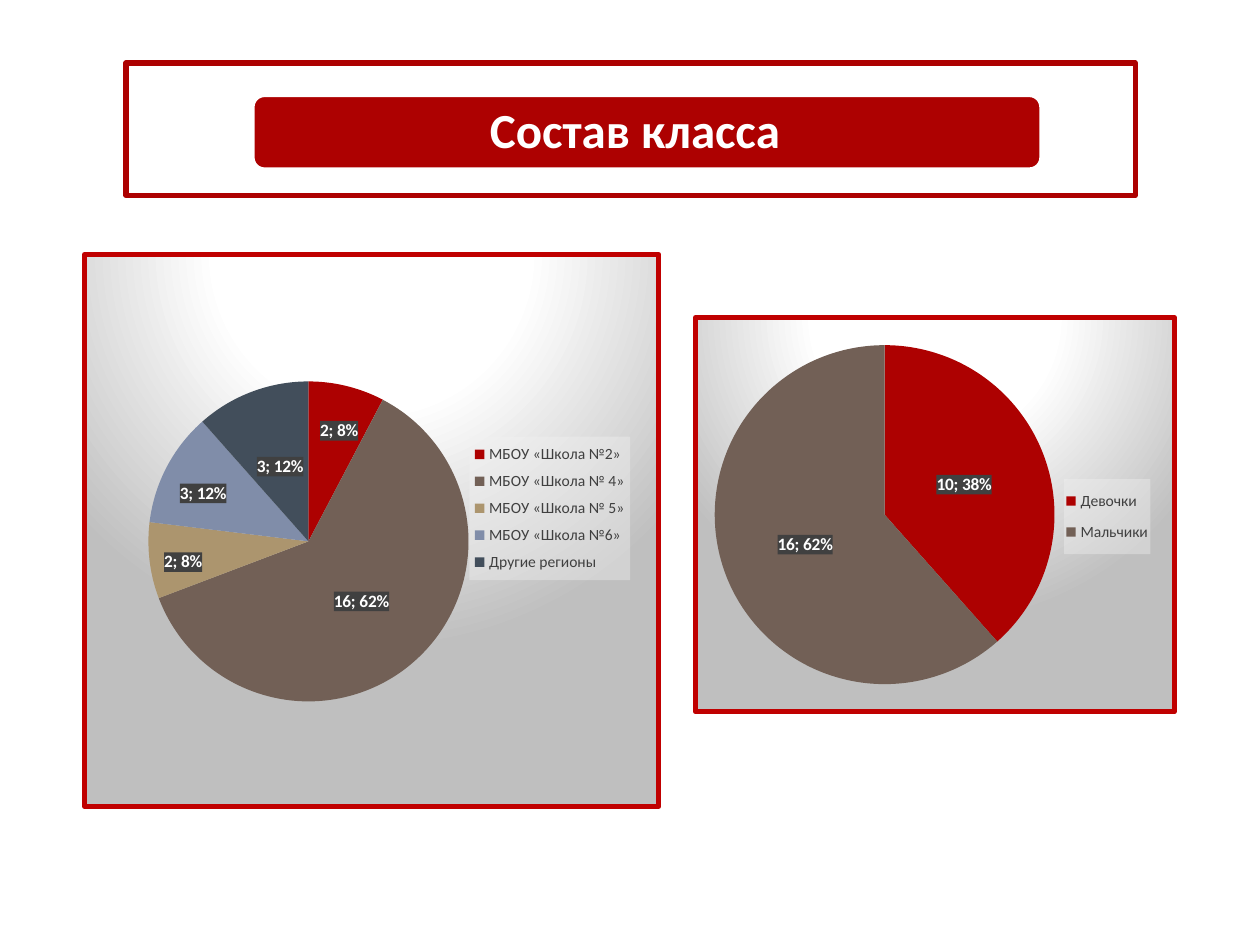
import copy
from dataclasses import dataclass, field
from typing import NamedTuple

import lxml.etree
import pptx
import pptx.chart.chart
import pptx.chart.data
import pptx.dml.color
import pptx.enum.chart
import pptx.enum.shapes
import pptx.enum.text
import pptx.oxml
import pptx.oxml.ns
import pptx.util

COLS, ROWS = 20, 15
SLIDE_W, SLIDE_H = pptx.util.Inches(10), pptx.util.Inches(7.5)
qn = pptx.oxml.ns.qn


@dataclass(frozen=True)
class Theme:
    font: str = "Calibri"
    red: str = "AD0101"
    border: str = "C00000"
    white: str = "FFFFFF"
    grey: str = "BFBFBF"
    legend_text: str = "404040"
    legend_fill: str = "F2F2F2"
    label_fill: str = "404040"
    slices: tuple = ("AD0101", "726056", "AC956E", "808DA9", "424E5B")
    title_size: int = 28
    label_size: int = 10
    legend_size: int = 9
    line_width: int = 3


THEME = Theme()


class Box(NamedTuple):
    """Left, top, width and height in grid columns and rows."""
    col: float
    row: float
    cols: float
    rows: float

    def emu(self) -> tuple:
        cw, rh = SLIDE_W / COLS, SLIDE_H / ROWS
        return tuple(round(v) for v in
                     (self.col * cw, self.row * rh, self.cols * cw, self.rows * rh))


class Share(NamedTuple):
    """Place inside a chart, as shares of the chart's size."""
    x: float
    y: float
    w: float
    h: float


@dataclass(frozen=True)
class Pie:
    box: Box
    plot: Share
    legend: Share
    counts: dict
    label_shifts: dict = field(default_factory=dict)


PIES = (
    Pie(Box(1.3, 4, 9.2, 8.84), Share(0.11, 0.23, 0.56, 0.58), Share(0.67, 0.33, 0.28, 0.26),
        {"МБОУ «Школа №2»": 2, "МБОУ «Школа № 4»": 16, "МБОУ «Школа № 5»": 2,
         "МБОУ «Школа №6»": 3, "Другие регионы": 3},
        {0: (0.02, -0.06), 2: (-0.08, 0.02), 3: (-0.06, -0.02)}),
    Pie(Box(11, 5, 7.68, 6.34), Share(0.04, 0.07, 0.71, 0.86), Share(0.77, 0.41, 0.18, 0.19),
        {"Девочки": 10, "Мальчики": 16}),
)


def rgb(code: str) -> pptx.dml.color.RGBColor:
    return pptx.dml.color.RGBColor.from_string(code)


def set_font(font, color: str, **values) -> None:
    font.color.rgb = rgb(color)
    for name, value in {"name": THEME.font, **values}.items():
        setattr(font, name, value)


def chart_xml(body: str):
    ns = pptx.oxml.ns.nsdecls("c", "a")
    return pptx.oxml.parse_xml(body.replace(">", f" {ns}>", 1))


def solid_xml(color: str, alpha: int):
    return chart_xml(f'<c:spPr><a:solidFill><a:srgbClr val="{color}">'
                     f'<a:alpha val="{alpha * 1000}"/></a:srgbClr></a:solidFill></c:spPr>')


def layout_xml(target: str = "", **values):
    head = f'<c:layoutTarget val="{target}"/>' if target else ""
    modes = '<c:xMode val="edge"/><c:yMode val="edge"/>' if "w" in values else ""
    sizes = "".join(f'<c:{k} val="{v}"/>' for k, v in values.items())
    return chart_xml(f"<c:layout><c:manualLayout>{head}{modes}{sizes}"
                     "</c:manualLayout></c:layout>")


def set_layout(parent, layout, before: str) -> None:
    for old in parent.findall(qn("c:layout")):
        parent.remove(old)
    parent.find(qn(before)).addprevious(layout)


def format_background(chart: pptx.chart.chart.Chart) -> None:
    stops = "".join(f'<a:gs pos="{pos}000"><a:srgbClr val="{color}"/></a:gs>' for pos, color in
                    ((0, THEME.white), (39, THEME.white), (100, THEME.grey)))
    sp_pr = chart_xml(
        f'<c:spPr><a:gradFill><a:gsLst>{stops}</a:gsLst><a:path path="circle">'
        '<a:fillToRect l="50000" t="-80000" r="50000" b="180000"/></a:path></a:gradFill>'
        f'<a:ln w="{pptx.util.Pt(THEME.line_width)}"><a:solidFill>'
        f'<a:srgbClr val="{THEME.border}"/></a:solidFill><a:round/></a:ln></c:spPr>')
    chart.element.find(qn("c:chart")).addnext(sp_pr)


def format_labels(labels, shifts: dict) -> None:
    for name, value in {"show_value": True, "show_percentage": True,
                        "position": pptx.enum.chart.XL_LABEL_POSITION.CENTER}.items():
        setattr(labels, name, value)
    set_font(labels.font, THEME.white, size=pptx.util.Pt(THEME.label_size), bold=True)
    el = labels._element
    el.find(qn("c:txPr")).addprevious(solid_xml(THEME.label_fill, 75))
    separator = chart_xml("<c:separator>; </c:separator>")
    el.find(qn("c:showBubbleSize")).addnext(separator)
    shared = [c for c in el if c.tag != qn("c:showLeaderLines")]
    for i, (idx, (dx, dy)) in enumerate(sorted(shifts.items())):
        label = chart_xml(f'<c:dLbl><c:idx val="{idx}"/></c:dLbl>')
        label.append(layout_xml(x=dx, y=dy))
        label.extend(copy.deepcopy(c) for c in shared)
        el.insert(i, label)


def add_pie(slide, pie: Pie) -> None:
    data = pptx.chart.data.CategoryChartData()
    data.categories = list(pie.counts)
    data.add_series("Series 1", list(pie.counts.values()))
    chart = slide.shapes.add_chart(pptx.enum.chart.XL_CHART_TYPE.PIE,
                                   *pie.box.emu(), data).chart
    chart.has_title = False
    set_font(chart.font, "000000", size=pptx.util.Pt(THEME.label_size))
    format_background(chart)

    plot = chart.plots[0]
    plot.vary_by_categories = True
    series = plot.series[0]
    for i, color in enumerate(THEME.slices[:len(pie.counts)]):
        fill = series.points[i].format.fill
        fill.solid()
        fill.fore_color.rgb = rgb(color)
    format_labels(series.data_labels, pie.label_shifts)
    area = chart.element.find(".//" + qn("c:plotArea"))
    set_layout(area, layout_xml("inner", **pie.plot._asdict()), "c:pieChart")

    chart.has_legend = True
    legend = chart.legend
    legend.position = pptx.enum.chart.XL_LEGEND_POSITION.RIGHT
    legend.include_in_layout = False
    set_font(legend.font, THEME.legend_text, size=pptx.util.Pt(THEME.legend_size))
    el = legend._element
    set_layout(el, layout_xml(**pie.legend._asdict()), "c:overlay")
    el.find(qn("c:txPr")).addprevious(solid_xml(THEME.legend_fill, 39))


def add_panel(slide, kind, box: Box, fill: str, line: str, alpha: int = 100) -> None:
    sp = slide.shapes.add_shape(kind, *box.emu())
    sp.shadow.inherit = False
    sp.fill.solid()
    sp.fill.fore_color.rgb = rgb(fill)
    sp.line.color.rgb = rgb(line)
    sp.line.width = pptx.util.Pt(THEME.line_width)
    if alpha < 100:
        color = sp._element.spPr.find(qn("a:solidFill"))[0]
        lxml.etree.SubElement(color, qn("a:alpha")).set("val", str(alpha * 1000))


def place_title(slide, text: str, box: Box) -> None:
    """Format the title placeholder and bring it in front of the panels."""
    sp = slide.shapes.title
    sp.left, sp.top, sp.width, sp.height = box.emu()
    tf = sp.text_frame
    inch = pptx.util.Inches
    for name, value in {"margin_left": inch(0.21), "margin_right": inch(0.4),
                        "margin_top": 0, "margin_bottom": 0, "word_wrap": True,
                        "auto_size": pptx.enum.text.MSO_AUTO_SIZE.NONE,
                        "vertical_anchor": pptx.enum.text.MSO_ANCHOR.MIDDLE}.items():
        setattr(tf, name, value)
    p = tf.paragraphs[0]
    p.alignment = pptx.enum.text.PP_ALIGN.CENTER
    p.line_spacing = 0.9
    r = p.add_run()
    r.text = text
    set_font(r.font, THEME.white, size=pptx.util.Pt(THEME.title_size), bold=True)
    sp._element.getparent().append(sp._element)


def main() -> None:
    prs = pptx.Presentation()
    prs.slide_width, prs.slide_height = SLIDE_W, SLIDE_H
    slide = prs.slides.add_slide(prs.slide_layouts[5])
    kinds = pptx.enum.shapes.MSO_SHAPE
    add_panel(slide, kinds.RECTANGLE, Box(2, 1, 16.02, 2.1), THEME.white, THEME.red, 90)
    add_panel(slide, kinds.ROUNDED_RECTANGLE, Box(4, 1.5, 12.54, 1.2), THEME.red, THEME.white)
    place_title(slide, "Состав класса", Box(4.06, 1.56, 12.42, 1.1))
    for pie in PIES:
        add_pie(slide, pie)
    prs.save("out.pptx")


if __name__ == "__main__":
    main()
